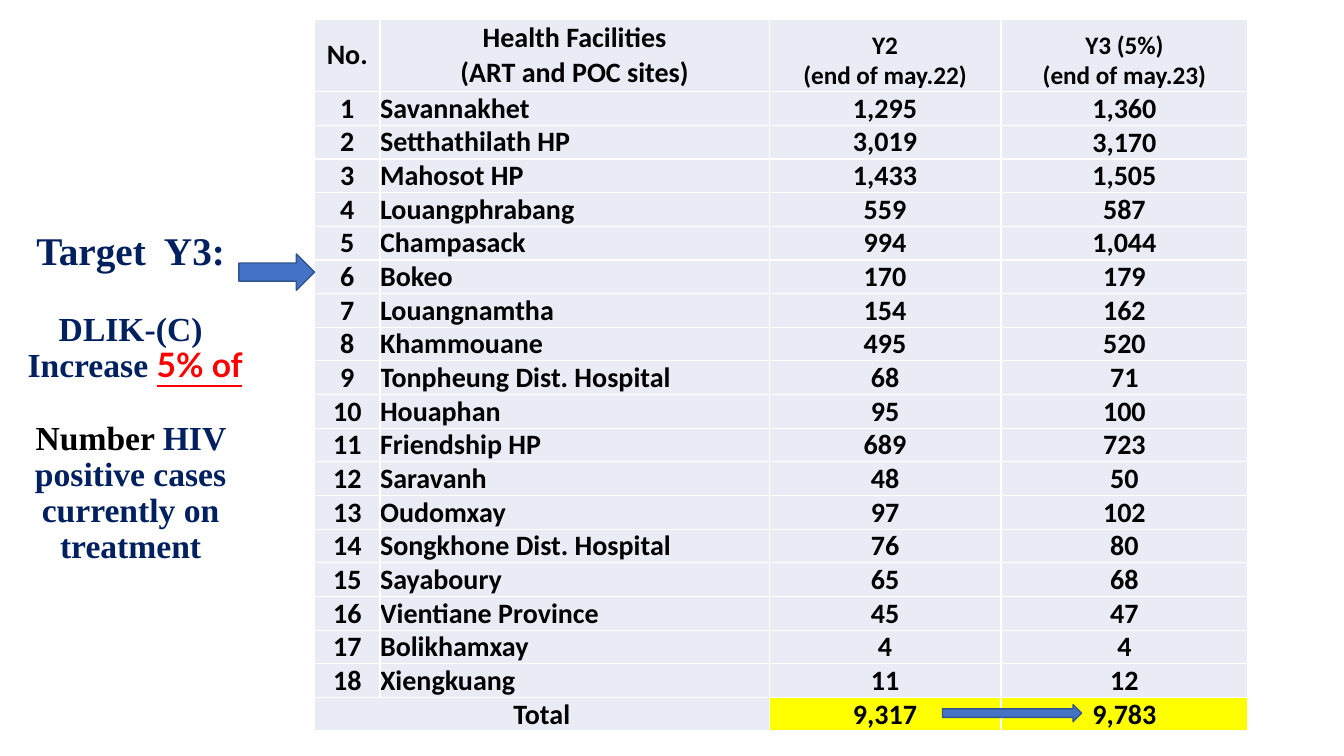
from lxml.etree import SubElement
from pptx import Presentation
from pptx.dml.color import RGBColor
from pptx.enum.shapes import MSO_SHAPE as Shape
from pptx.enum.text import MSO_ANCHOR as Anchor, PP_ALIGN as Align
from pptx.oxml.ns import qn
from pptx.util import Inches, Pt

NAVY, RED, BLACK, WHITE = "002060", "FF0000", "000000", "FFFFFF"
PALE, YELLOW, BLUE, DARK_BLUE = "E9EBF5", "FFFF00", "4472C4", "325491"
SERIF, SANS, ACCENT = "Times New Roman", "Calibri", "Lato"

HEADINGS = ["No.", "Health Facilities\n(ART and POC sites)",
            "Y2\v(end of may.22)", "Y3 (5%)\v(end of may.23)"]
FACILITIES = [
    ("Savannakhet", 1295, 1360),
    ("Setthathilath HP", 3019, 3170),
    ("Mahosot HP", 1433, 1505),
    ("Louangphrabang", 559, 587),
    ("Champasack", 994, 1044),
    ("Bokeo", 170, 179),
    ("Louangnamtha", 154, 162),
    ("Khammouane", 495, 520),
    ("Tonpheung Dist. Hospital", 68, 71),
    ("Houaphan", 95, 100),
    ("Friendship HP", 689, 723),
    ("Saravanh", 48, 50),
    ("Oudomxay", 97, 102),
    ("Songkhone Dist. Hospital", 76, 80),
    ("Sayaboury", 65, 68),
    ("Vientiane Province", 45, 47),
    ("Bolikhamxay", 4, 4),
    ("Xiengkuang", 11, 12),
]
TOTALS = (9317, 9783)


def rgb(value):
    return RGBColor.from_string(value)


class TargetSlide:
    def __init__(self, deck):
        self.slide = deck.slides.add_slide(deck.slide_layouts[6])
        self.column = deck.slide_width / 100
        self.row = deck.slide_height / 100

    def place(self, left, top, width, height):
        return (round(left * self.column), round(top * self.row),
                round(width * self.column), round(height * self.row))

    def style(self, paragraph, size, font=None, color=None, align=Align.CENTER):
        paragraph.alignment = align
        paragraph.font.size = Pt(size)
        paragraph.font.bold = True
        if font:
            paragraph.font.name = font
        if color:
            paragraph.font.color.rgb = rgb(color)

    def arrow(self, *area):
        arrow = self.slide.shapes.add_shape(Shape.RIGHT_ARROW, *self.place(*area))
        arrow.shadow.inherit = False
        arrow.fill.solid()
        arrow.fill.fore_color.rgb = rgb(BLUE)
        arrow.line.color.rgb = rgb(DARK_BLUE)
        arrow.line.width = Pt(1)

    def statement(self, area, heading, lines):
        frame = self.slide.shapes.add_textbox(*self.place(*area)).text_frame
        frame.word_wrap = True
        frame.vertical_anchor = Anchor.MIDDLE
        title = frame.paragraphs[0]
        title.text = heading
        self.style(title, 28, SERIF, NAVY)
        title.line_spacing = 0.9
        title.space_after = Pt(27)
        title._p.get_or_add_pPr().set("marR", str(Inches(0.2)))
        body = frame.add_paragraph()
        self.style(body, 24)
        body.line_spacing = 0.9
        for index, line in enumerate(lines):
            if index:
                body.add_line_break()
            for text, font, color in line:
                run = body.add_run()
                run.text = text
                run.font.name = font
                run.font.color.rgb = rgb(color)
                run.font.underline = color == RED

    def cell(self, cell, text, size=20, align=Align.CENTER, anchor=Anchor.MIDDLE, fill=PALE):
        cell.margin_left = cell.margin_right = cell.margin_top = cell.margin_bottom = 0
        cell.vertical_anchor = anchor
        cell.text_frame.text = text
        for paragraph in cell.text_frame.paragraphs:
            self.style(paragraph, size, SANS, BLACK, align)
        properties = cell._tc.get_or_add_tcPr()
        for side in ("a:lnL", "a:lnR", "a:lnT", "a:lnB"):
            border = SubElement(properties, qn(side), w=str(Pt(1)))
            SubElement(SubElement(border, qn("a:solidFill")), qn("a:srgbClr"), val=WHITE)
        cell.fill.solid()
        cell.fill.fore_color.rgb = rgb(fill)

    def facility_table(self, left, top, widths, header_height, row_height):
        count = len(FACILITIES) + 2
        area = left, top, sum(widths), header_height + row_height * (count - 1)
        table = self.slide.shapes.add_table(count, len(widths), *self.place(*area)).table
        table.first_row = table.horz_banding = False
        for column, width in zip(table.columns, widths):
            column.width = round(width * self.column)
        for index, row in enumerate(table.rows):
            row.height = round((row_height if index else header_height) * self.row)
        for column, heading in enumerate(HEADINGS):
            yearly = column > 1
            self.cell(table.cell(0, column), heading, 18 if yearly else 20,
                      anchor=Anchor.BOTTOM if yearly else Anchor.MIDDLE)
        for number, (name, year2, year3) in enumerate(FACILITIES, 1):
            values = str(number), name, f"{year2:,}", f"{year3:,}"
            for column, value in enumerate(values):
                self.cell(table.cell(number, column), value,
                          align=Align.LEFT if column == 1 else Align.CENTER,
                          anchor=Anchor.MIDDLE if column == 3 else Anchor.BOTTOM)
        last = count - 1
        table.cell(last, 0).merge(table.cell(last, 1))
        self.cell(table.cell(last, 0), "Total")
        for column, total in enumerate(TOTALS, 2):
            self.cell(table.cell(last, column), f"{total:,}", fill=YELLOW)


def main():
    deck = Presentation()
    deck.slide_width, deck.slide_height = Inches(13.33), Inches(7.5)
    target = TargetSlide(deck)
    target.statement((0.68, 7.33, 19.58, 90.93), "Target  Y3:", [
        [("DLIK-(C)", SERIF, NAVY)],
        [(" Increase ", SERIF, NAVY), ("5% of ", ACCENT, RED)],
        [("Number ", SERIF, BLACK),
         ("HIV positive cases currently on treatment", SERIF, NAVY)],
    ])
    target.facility_table(23.4, 2.53, (4.88, 28.95, 17.25, 18.38), 9.6, 4.4)
    target.arrow(17.78, 33.6, 5.63, 4.8)
    target.arrow(70.13, 93.2, 10.35, 2.27)
    deck.save("out.pptx")


if __name__ == "__main__":
    main()
